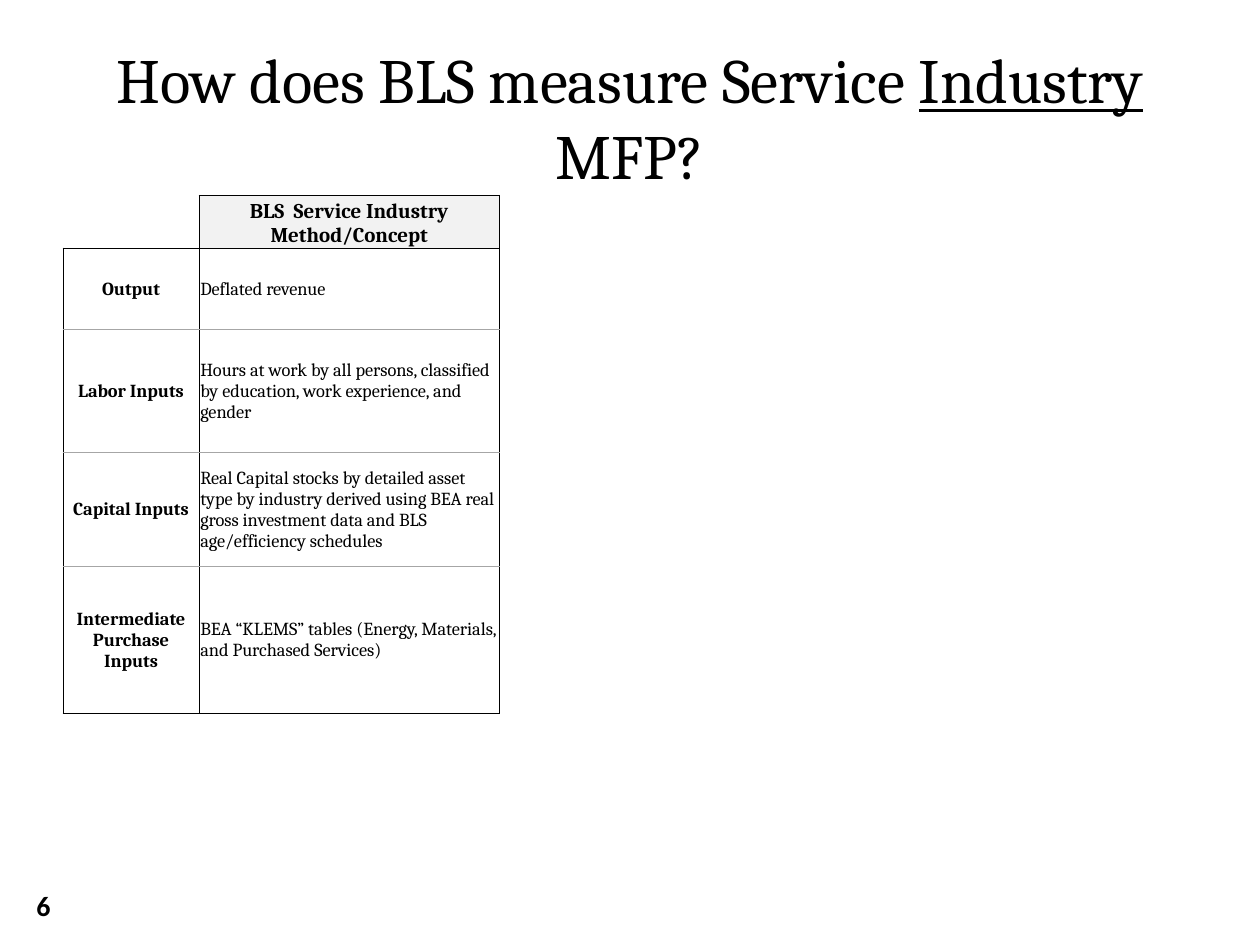
from lxml import etree
from pptx import Presentation
from pptx.dml.color import RGBColor
from pptx.enum import text
from pptx.oxml import ns
from pptx.util import Pt

BLACK, GREY, PALE, WHITE = "000000", "A6A6A6", "F2F2F2", "FFFFFF"
MID, CENTER, LEFT = text.MSO_ANCHOR.MIDDLE, text.PP_ALIGN.CENTER, text.PP_ALIGN.LEFT

HEAD = "BLS  Service Industry Method/Concept"
ROWS = [
    ("Output", "Deflated revenue"),
    ("Labor Inputs", "Hours at work by all persons, classified by education, "
                     "work experience, and gender"),
    ("Capital Inputs", "Real Capital stocks by detailed asset type by industry derived "
                       "using BEA real gross investment data and BLS age/efficiency schedules"),
    ("Intermediate Purchase Inputs", "BEA “KLEMS” tables (Energy, Materials, "
                                     "and Purchased Services)"),
]
WIDTHS = (77.8, 171.6)
HEIGHTS = (30.2, 46.3, 70.4, 65, 84.1)


def color(code):
    return RGBColor.from_string(code)


def add_run(para, words, size, face="Cambria", bold=False, line=False):
    run = para.add_run()
    run.text = words
    font = run.font
    font.name, font.size, font.bold, font.underline = face, Pt(size), bold, line
    font.color.rgb = color(BLACK)


def place(shape, box):
    shape.left, shape.top, shape.width, shape.height = map(Pt, box)


def edge(cell, **sides):
    """Draw the borders of a cell; a side without a colour has no line."""
    props = cell._tc.get_or_add_tcPr()
    for side in "LRTB":
        line = etree.SubElement(props, ns.qn("a:ln" + side), w=str(Pt(0.5)))
        code = sides.get(side)
        if code:
            fill = etree.SubElement(line, ns.qn("a:solidFill"))
            etree.SubElement(fill, ns.qn("a:srgbClr"), val=code)
        else:
            etree.SubElement(line, ns.qn("a:noFill"))


def set_cell(cell, words, size, bold, align, anchor):
    cell.margin_left = cell.margin_right = cell.margin_top = Pt(0.7)
    cell.margin_bottom = 0
    cell.vertical_anchor = anchor
    para = cell.text_frame.paragraphs[0]
    para.alignment = align
    if words:
        add_run(para, words, size, bold=bold)
    else:
        para.font.size = Pt(size)


def add_title(slide, box):
    title = slide.shapes.title
    place(title, box)
    frame = title.text_frame
    frame.word_wrap, frame.vertical_anchor = True, MID
    para = frame.paragraphs[0]
    para.alignment = CENTER
    add_run(para, "How does BLS measure Service ", 36)
    add_run(para, "Industry", 36, line=True)
    add_run(para, " MFP?", 36)


def add_grid(slide, box):
    table = slide.shapes.add_table(len(HEIGHTS), len(WIDTHS), *map(Pt, box)).table
    table.first_row = table.horz_banding = False
    for col, width in zip(table.columns, WIDTHS):
        col.width = Pt(width)
    for row, height in zip(table.rows, HEIGHTS):
        row.height = Pt(height)

    # Header row: an open corner beside the shaded heading
    corner, head = table.cell(0, 0), table.cell(0, 1)
    set_cell(corner, "", 12, False, CENTER, MID)
    edge(corner, R=BLACK, B=BLACK)
    corner.fill.background()
    set_cell(head, HEAD, 12, True, CENTER, text.MSO_ANCHOR.BOTTOM)
    edge(head, L=BLACK, R=BLACK, T=BLACK, B=BLACK)
    head.fill.solid()
    head.fill.fore_color.rgb = color(PALE)

    # Body rows: black frame, grey lines between rows
    for r, pair in enumerate(ROWS, 1):
        top = BLACK if r == 1 else GREY
        base = BLACK if r == len(ROWS) else GREY
        for c, words in enumerate(pair):
            cell = table.cell(r, c)
            set_cell(cell, words, 10.5, c == 0, LEFT if c else CENTER, MID)
            edge(cell, L=BLACK, R=BLACK, T=top, B=base)
            cell.fill.background()


def add_number(slide, box):
    frame = slide.shapes.add_textbox(*map(Pt, box)).text_frame
    frame.word_wrap = True
    para = frame.paragraphs[0]
    para.alignment = CENTER
    add_run(para, "6", 16, face="Calibri", bold=True)


def main():
    deck = Presentation()
    deck.slide_width, deck.slide_height = Pt(720), Pt(540)
    slide = deck.slides.add_slide(deck.slide_layouts[5])
    slide.background.fill.solid()
    slide.background.fill.fore_color.rgb = color(WHITE)
    add_title(slide, (36, 21.6, 648, 90))
    add_grid(slide, (36, 111.6, sum(WIDTHS), sum(HEIGHTS)))
    add_number(slide, (0.7, 504, 48.2, 28.8))
    deck.save("out.pptx")


if __name__ == "__main__":
    main()
